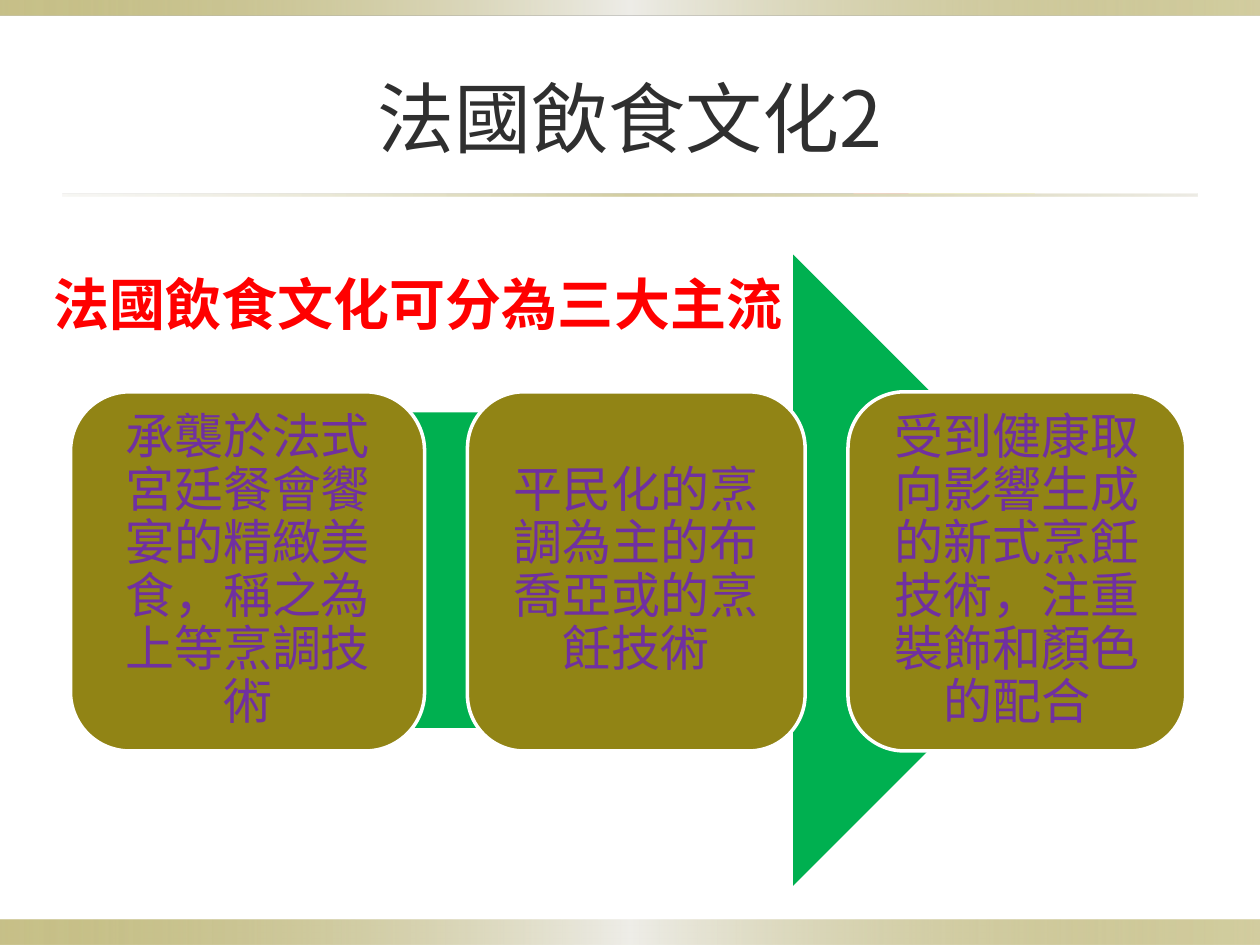
from lxml import etree
from pptx import Presentation
from pptx.dml.color import RGBColor
from pptx.enum.shapes import MSO_SHAPE
from pptx.enum.text import MSO_ANCHOR, MSO_AUTO_SIZE, PP_ALIGN
from pptx.oxml.ns import qn
from pptx.util import Inches, Pt

RECT, ROUND = MSO_SHAPE.RECTANGLE, MSO_SHAPE.ROUNDED_RECTANGLE
ARROW = MSO_SHAPE.RIGHT_ARROW
CENTER, MIDDLE = PP_ALIGN.CENTER, MSO_ANCHOR.MIDDLE
FIXED = MSO_AUTO_SIZE.NONE
FONT = "Noto Sans CJK SC"
WIDE, HIGH = 10, 7.5
SIDE = 0.5
OLIVE, GREEN, PALE = "918415", "00B050", "DCD9CC"
BAND = [(0, OLIVE, 50), (50, "EEEDE8", 100), (100, OLIVE, 40)]
RULE = [(0, PALE, 20), (50, OLIVE, 40), (100, PALE, 50)]
STREAMS = [
    ("承襲於法式宮廷餐會饗宴的精緻美食，稱之為上等烹調技術", 2.81),
    ("平民化的烹調為主的布喬亞或的烹飪技術", 2.68),
    ("受到健康取向影響生成的新式烹飪技術，注重裝飾和顏色的配合", 2.68),
]


def color(code):
    """Turn a hex string into a colour."""
    return RGBColor.from_string(code)


def write(shape, text, size=28, ink="2F2F2F", bold=False, pad=None, lead=None):
    """Put centred, formatted text into a shape."""
    frame = shape.text_frame
    frame.word_wrap = True
    frame.auto_size = FIXED
    frame.vertical_anchor = MIDDLE
    if pad is not None:
        frame.margin_left = frame.margin_right = Inches(pad)
        frame.margin_top = frame.margin_bottom = Inches(pad)
    para = frame.paragraphs[0]
    para.alignment = CENTER
    para.line_spacing = lead
    run = para.add_run()
    run.text = text
    font = run.font
    font.name, font.size, font.bold = FONT, Pt(size), bold
    font.color.rgb = color(ink)
    east = etree.SubElement(run._r.get_or_add_rPr(), qn("a:ea"))
    east.set("typeface", FONT)


def draw(slide, kind, spot, fill=None, line=None):
    """Add a preset shape with a plain fill and an optional outline."""
    shape = slide.shapes.add_shape(kind, *map(Inches, spot))
    shape.shadow.inherit = False
    if fill:
        shape.fill.solid()
        shape.fill.fore_color.rgb = color(fill)
    if line:
        shape.line.color.rgb = color(line)
        shape.line.width = Pt(2)
    else:
        shape.line.fill.background()
    return shape


def fade(slide, spot, stops):
    """Add a bar that fades across see-through colour stops."""
    bar = draw(slide, RECT, spot)
    bar.fill.gradient()
    bar.fill.gradient_angle = 0
    group = bar._element.spPr.find(qn("a:gradFill")).find(qn("a:gsLst"))
    for old in list(group):
        group.remove(old)
    for place, code, alpha in stops:
        stop = etree.SubElement(group, qn("a:gs"), pos=str(place * 1000))
        tint = etree.SubElement(stop, qn("a:srgbClr"), val=code)
        etree.SubElement(tint, qn("a:alpha"), val=str(alpha * 1000))


def head(slide, text):
    """Place and fill the title."""
    title = slide.shapes.title
    title.left, title.top = Inches(SIDE), Inches(0.3)
    title.width, title.height = Inches(WIDE - 2 * SIDE), Inches(1.25)
    write(title, text, size=44)


def flow(slide, left=0.56, top=3.11, high=2.85, gap=0.34):
    """Lay the boxes in a row over the arrow."""
    draw(slide, ARROW, (1.15, 2.02, 7.65, 5.01), GREEN)
    for text, wide in STREAMS:
        box = draw(slide, ROUND, (left, top, wide, high), OLIVE, "FFFFFF")
        write(box, text, ink="7030A0", pad=0.12, lead=0.9)
        left += wide + gap


def main():
    """Build and save the slide."""
    deck = Presentation()
    deck.slide_width, deck.slide_height = Inches(WIDE), Inches(HIGH)
    slide = deck.slides.add_slide(deck.slide_layouts[5])
    fade(slide, (0, HIGH - 0.2, WIDE, 0.2), BAND)
    fade(slide, (0, 0, WIDE, 0.12), BAND)
    fade(slide, (SIDE, 1.54, WIDE - 2 * SIDE, 0.02), RULE)
    head(slide, "法國飲食文化2")
    flow(slide)
    note = slide.shapes.add_textbox(*map(Inches, (0.2, 1.78, 6.24, 1.25)))
    write(note, "法國飲食文化可分為三大主流", size=32, ink="FF0000", bold=True)
    deck.save("out.pptx")


if __name__ == "__main__":
    main()
